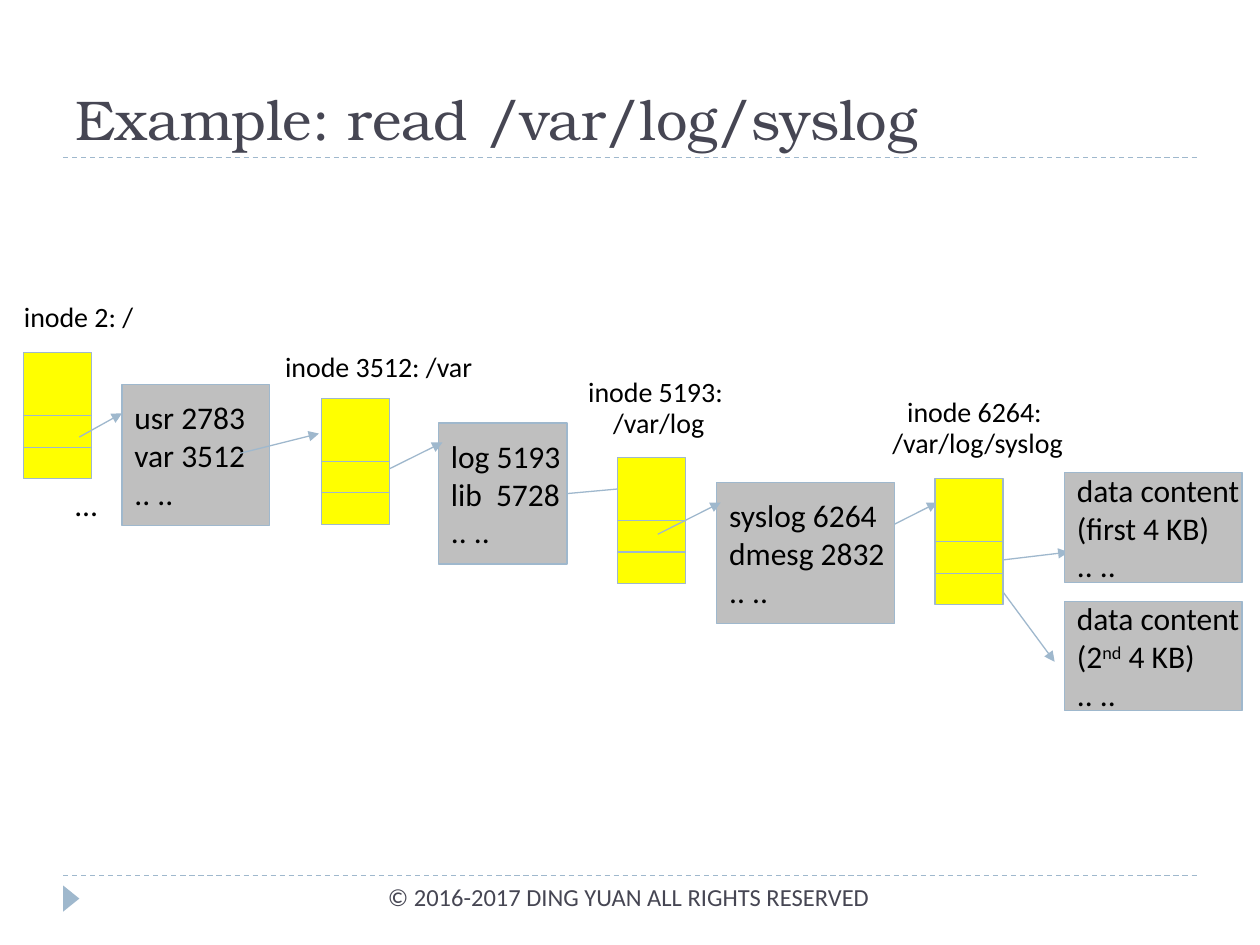
from dataclasses import dataclass

from lxml import etree
from pptx import Presentation
from pptx.dml.color import RGBColor
from pptx.enum.dml import MSO_LINE
from pptx.enum.shapes import MSO_CONNECTOR, MSO_SHAPE
from pptx.enum.text import MSO_ANCHOR, PP_ALIGN
from pptx.oxml.ns import qn
from pptx.util import Cm, Pt

STRAIGHT = MSO_CONNECTOR.STRAIGHT
RECT = MSO_SHAPE.RECTANGLE
TRIANGLE = MSO_SHAPE.ISOSCELES_TRIANGLE
DASH = MSO_LINE.DASH
LEFT, CENTER, RIGHT = PP_ALIGN.LEFT, PP_ALIGN.CENTER, PP_ALIGN.RIGHT
TOP, MIDDLE, BOTTOM = MSO_ANCHOR.TOP, MSO_ANCHOR.MIDDLE, MSO_ANCHOR.BOTTOM
RIGHT_SIDE = 3


@dataclass(frozen=True)
class Theme:
    accent: RGBColor = RGBColor(0x9F, 0xB8, 0xCD)
    heading: RGBColor = RGBColor(0x46, 0x46, 0x53)
    text: RGBColor = RGBColor(0, 0, 0)
    inode: RGBColor = RGBColor(0xFF, 0xFF, 0)
    block: RGBColor = RGBColor(0xBF, 0xBF, 0xBF)
    title_font: str = "TeX Gyre Bonum"
    body_font: str = "Calibri"
    title_size: int = 32
    block_size: int = 18
    label_size: int = 16
    footer_size: int = 14
    line_width: float = 0.75


THEME = Theme()

# Boxes are (left, top, width, height) in centimetres.
INODES = [
    ((0.48, 7.11, 1.37, 2.54), ["inode 2: /"], (0.1, 5.92, 2.97, 0.94)),
    ((6.48, 8.03, 1.37, 2.54), ["inode 3512: /var"], (4.83, 6.93, 5.61, 0.94)),
    ((12.45, 9.22, 1.37, 2.54), ["inode 5193:", " /var/log"], (10.41, 7.72, 5.61, 1.35)),
    ((18.85, 9.65, 1.37, 2.54), ["inode 6264:", " /var/log/syslog"], (16.84, 8.13, 5.61, 1.35)),
]
USR_DIR = ((2.46, 7.75, 2.97, 2.84), ["usr 2783", "var 3512", ".. .."])
LOG_DIR = ((8.84, 8.53, 2.59, 2.84), ["log 5193", "lib  5728", ".. .."])
SYSLOG_DIR = ((14.45, 9.73, 3.58, 2.84), ["syslog 6264", "dmesg 2832", ".. .."])
DATA = [
    ((21.46, 9.53, 3.58, 2.21), ["data content", "(first 4 KB)", ".. .."]),
    ((21.46, 12.12, 3.58, 2.21), ["data content", ("(2", "nd", " 4 KB)"), ".. .."]),
]
# Arrows are (x1, y1, x2, y2) in centimetres.
ARROWS_BEHIND = [
    (7.65, 9.55, 8.92, 8.92),
    (17.63, 10.77, 18.9, 10.13),
    (20.07, 11.73, 21.26, 13.34),
    (19.86, 11.33, 21.54, 11.13),
]
LOG_ARROW = (11.43, 9.95, 13.08, 9.8)
ARROWS_IN_FRONT = [
    (1.6, 8.81, 2.46, 8.33),
    (4.83, 9.14, 6.43, 8.74),
    (13.26, 10.77, 14.53, 10.13),
]


def write_text(sp, lines, size, font=THEME.body_font, color=THEME.text,
               align=LEFT, anchor=TOP, wrap=True, spacing=None, before=0):
    """Write one paragraph per line; in a tuple, every second part is superscript."""
    tf = sp.text_frame
    tf.word_wrap = wrap
    tf.vertical_anchor = anchor
    for i, line in enumerate(lines):
        p = tf.paragraphs[0] if i == 0 else tf.add_paragraph()
        p.alignment = align
        p.space_before = Pt(before)
        if spacing:
            p.line_spacing = spacing
        parts = line if isinstance(line, tuple) else (line,)
        for j, part in enumerate(parts):
            r = p.add_run()
            r.text = part
            r.font.name = font
            r.font.size = Pt(size)
            r.font.color.rgb = color
            if j % 2:
                r._r.get_or_add_rPr().set("baseline", "30000")


def add_text(slide, box, lines, size, **fmt):
    sp = slide.shapes.add_textbox(*map(Cm, box))
    write_text(sp, lines, size, **fmt)


def add_filled(slide, kind, box, fill, outlined=True):
    sp = slide.shapes.add_shape(kind, *map(Cm, box))
    sp.shadow.inherit = False
    sp.fill.solid()
    sp.fill.fore_color.rgb = fill
    if outlined:
        sp.line.color.rgb = THEME.accent
        sp.line.width = Pt(THEME.line_width)
    else:
        sp.line.fill.background()
    return sp


def add_line(slide, ends):
    line = slide.shapes.add_connector(STRAIGHT, *map(Cm, ends))
    line.line.color.rgb = THEME.accent
    line.line.width = Pt(THEME.line_width)
    etree.SubElement(line._element.spPr, qn("a:effectLst"))
    return line


def add_arrow(slide, ends):
    arrow = add_line(slide, ends)
    etree.SubElement(arrow.line._get_or_add_ln(), qn("a:tailEnd"), type="triangle")
    return arrow


def add_inode(slide, box, label, label_box):
    """Draw the attribute cell, half the height, over two pointer cells."""
    left, top, width, height = box
    quarter = height / 4
    for start, count in ((2, 1), (3, 1), (0, 2)):
        cell = (left, top + start * quarter, width, count * quarter)
        add_filled(slide, RECT, cell, THEME.inode)
    spacing = 0.5 if len(label) > 1 else None
    add_text(slide, label_box, label, THEME.label_size, align=CENTER,
             spacing=spacing, before=THEME.label_size / 2)


def add_block(slide, box, lines):
    sp = add_filled(slide, RECT, box, THEME.block)
    write_text(sp, lines, THEME.block_size, anchor=MIDDLE, wrap=False)
    return sp


def add_header(slide, box):
    left, top, width, height = box
    bottom = top + height
    add_line(slide, (left, bottom, left + width, bottom)).line.dash_style = DASH
    add_text(slide, box, ["Example: read /var/log/syslog"], THEME.title_size,
             font=THEME.title_font, color=THEME.heading, anchor=BOTTOM)


def add_footer(slide, box):
    left, top, width, height = box
    add_line(slide, (left, top, left + width, top)).line.dash_style = DASH
    marker = add_filled(slide, TRIANGLE, (left - 0.1, top + 0.3, 0.53, 0.33),
                        THEME.accent, outlined=False)
    marker.rotation = 90
    add_text(slide, (left + 5.03, top, 11.48, height),
             ["© 2016-2017 DING YUAN ALL RIGHTS RESERVED"], THEME.footer_size,
             color=THEME.heading, align=RIGHT)


def add_lookup_chain(slide):
    add_block(slide, *USR_DIR)
    log_block = add_block(slide, *LOG_DIR)
    for ends in ARROWS_BEHIND:
        add_arrow(slide, ends)
    add_arrow(slide, LOG_ARROW).begin_connect(log_block, RIGHT_SIDE)
    for inode in INODES:
        add_inode(slide, *inode)
    add_text(slide, (0.89, 9.65, 1.7, 0.94), ["…"], THEME.block_size,
             align=CENTER, before=THEME.block_size / 2)
    for block in (SYSLOG_DIR, *DATA):
        add_block(slide, *block)
    for ends in ARROWS_IN_FRONT:
        add_arrow(slide, ends)


def main():
    prs = Presentation()
    prs.slide_width, prs.slide_height = Cm(25.4), Cm(19.05)
    slide = prs.slides.add_slide(prs.slide_layouts[6])
    add_header(slide, (1.27, 0.43, 22.86, 2.75))
    add_footer(slide, (1.27, 17.65, 22.86, 1.02))
    add_lookup_chain(slide)
    prs.save("out.pptx")


if __name__ == "__main__":
    main()
